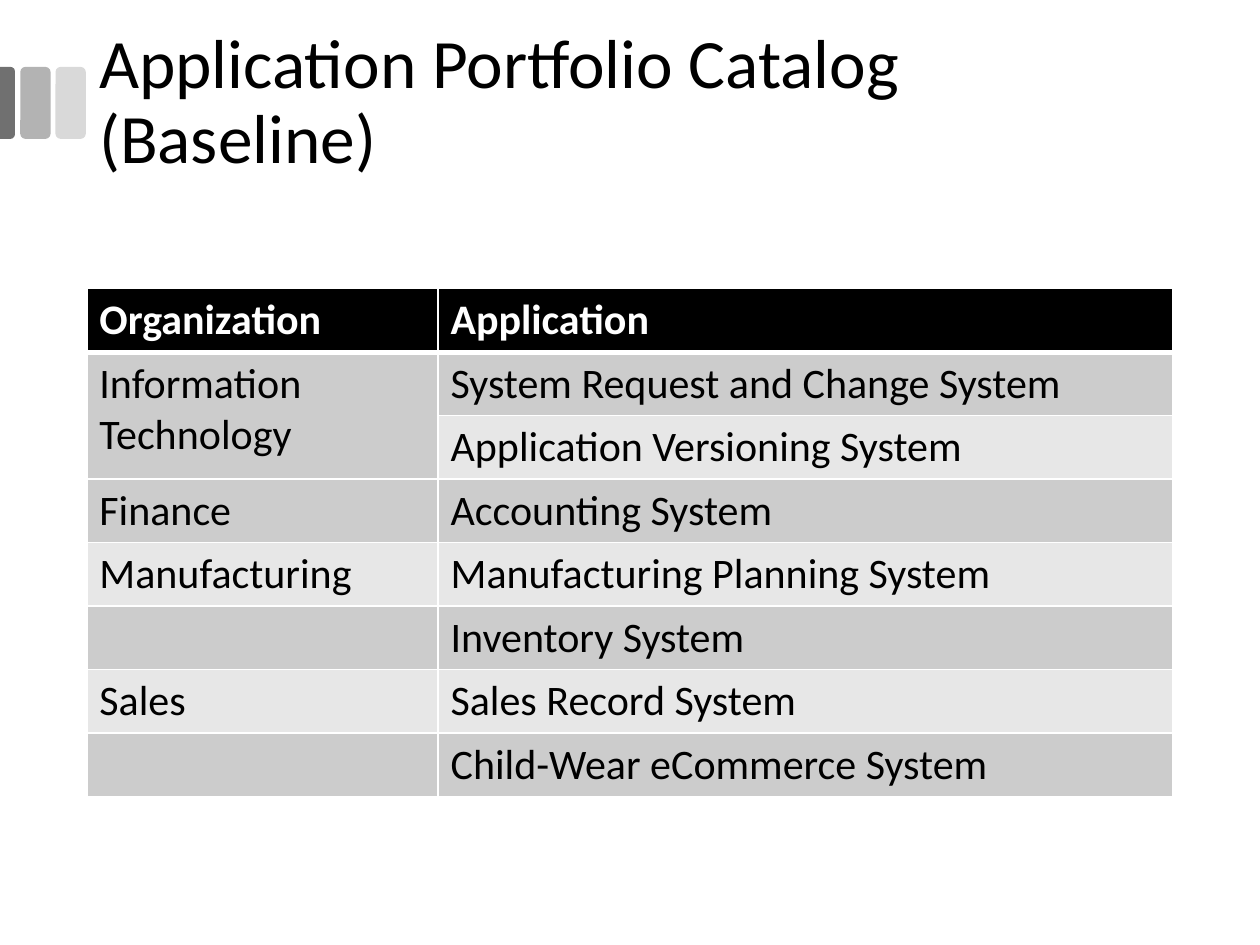
from lxml import etree
from pptx import Presentation, util as u
from pptx.dml.color import RGBColor
from pptx.enum import shapes, text
from pptx.oxml.ns import qn

TITLE = "Application Portfolio Catalog (Baseline)"
HEADER = ("Organization", "Application")
CATALOG = [
    ("Information Technology", "System Request and Change System"),
    ("", "Application Versioning System"),
    ("Finance", "Accounting System"),
    ("Manufacturing", "Manufacturing Planning System"),
    ("", "Inventory System"),
    ("Sales", "Sales Record System"),
    ("", "Child-Wear eCommerce System"),
]
MERGED = ((1, 0), (2, 0))
BANDS = ("CCCCCC", "E7E7E7")
COLUMN_WIDTHS = (7.08, 14.82)
ROW_HEIGHT = 1.28
LEFT, TITLE_TOP, TABLE_TOP = 1.75, 0.43, 5.82
TITLE_HEIGHT = 3.33

# Tabs beside the title: left edge, fill
TABS = [(1.12, "D9D9D9"), (0.41, "B3B3B3")]
TAB_TOP, TAB_WIDTH, TAB_HEIGHT = 1.35, 0.61, 1.45
EDGE_TAB_WIDTH = 0.3

TITLE_FONT = {"name": "Calibri", "size": u.Pt(39.6), "bold": False}
HEADER_FONT = {"name": "Calibri", "size": u.Pt(24), "bold": True}
BODY_FONT = {**HEADER_FONT, "bold": False}


def color(hex_value):
    return RGBColor.from_string(hex_value)


def format_font(font, values, hex_value):
    for name, value in values.items():
        setattr(font, name, value)
    font.color.rgb = color(hex_value)


def add_tab(slide, kind, left, top, width, height, hex_value):
    shape = slide.shapes.add_shape(
        kind, u.Cm(left), u.Cm(top), u.Cm(width), u.Cm(height))
    shape.shadow.inherit = False
    shape.fill.solid()
    shape.fill.fore_color.rgb = color(hex_value)
    shape.line.fill.background()
    return shape


def add_borders(cell, widths):
    """Draw white borders; widths maps a side (L, R, T, B) to points."""
    properties = cell._tc.get_or_add_tcPr()
    for side, points in widths.items():
        line = etree.SubElement(properties, qn(f"a:ln{side}"), w=str(u.Pt(points)))
        fill = etree.SubElement(line, qn("a:solidFill"))
        etree.SubElement(fill, qn("a:srgbClr"), val="FFFFFF")


def add_title(slide):
    box = slide.shapes.add_textbox(
        u.Cm(LEFT), u.Cm(TITLE_TOP), u.Cm(sum(COLUMN_WIDTHS)), u.Cm(TITLE_HEIGHT))
    frame = box.text_frame
    frame.word_wrap = True
    frame.vertical_anchor = text.MSO_ANCHOR.MIDDLE
    paragraph = frame.paragraphs[0]
    paragraph.line_spacing = 0.9
    run = paragraph.add_run()
    run.text = TITLE
    format_font(run.font, TITLE_FONT, "000000")


def add_catalog(slide):
    rows = [HEADER, *CATALOG]
    table = slide.shapes.add_table(
        len(rows), len(HEADER), u.Cm(LEFT), u.Cm(TABLE_TOP),
        u.Cm(sum(COLUMN_WIDTHS)), u.Cm(ROW_HEIGHT * len(rows))).table
    for column, width in zip(table.columns, COLUMN_WIDTHS):
        column.width = u.Cm(width)
    for r, row in enumerate(rows):
        table.rows[r].height = u.Cm(ROW_HEIGHT)
        for c, words in enumerate(row):
            cell = table.cell(r, c)
            add_borders(cell, {"L": 1, "R": 1, "T": 3 if r == 1 else 1,
                               "B": 3 if r == 0 else 1})
            cell.fill.solid()
            cell.fill.fore_color.rgb = color(BANDS[(r - 1) % 2] if r else "000000")
            if words:
                run = cell.text_frame.paragraphs[0].add_run()
                run.text = words
                format_font(run.font, BODY_FONT if r else HEADER_FONT,
                            "000000" if r else "FFFFFF")
    first, last = MERGED
    table.cell(*first).merge(table.cell(*last))


def main():
    presentation = Presentation()
    presentation.slide_width, presentation.slide_height = u.Cm(25.4), u.Cm(19.05)
    slide = presentation.slides.add_slide(presentation.slide_layouts[6])

    for left, fill in TABS:
        add_tab(slide, shapes.MSO_SHAPE.ROUNDED_RECTANGLE,
                left, TAB_TOP, TAB_WIDTH, TAB_HEIGHT, fill)
    # Turned a quarter, so its length runs down the slide's left edge
    offset = (TAB_HEIGHT - EDGE_TAB_WIDTH) / 2
    edge_tab = add_tab(slide, shapes.MSO_SHAPE.ROUND_2_SAME_RECTANGLE,
                       -offset, TAB_TOP + offset, TAB_HEIGHT, EDGE_TAB_WIDTH, "707070")
    edge_tab.rotation = 90
    edge_tab.adjustments[0] = 0.29

    add_title(slide)
    add_catalog(slide)
    presentation.save("out.pptx")


if __name__ == "__main__":
    main()
